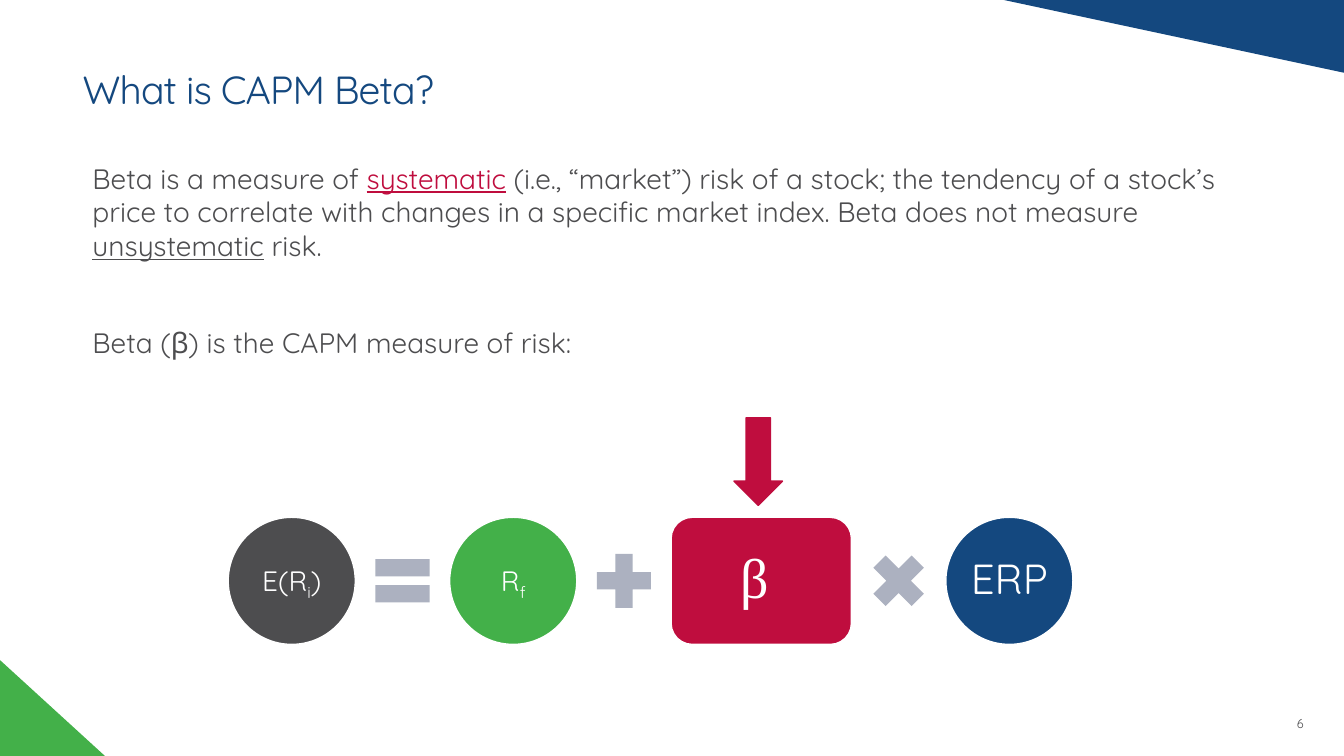
from dataclasses import dataclass

from pptx import Presentation
from pptx.dml.color import RGBColor
from pptx.enum.shapes import MSO_SHAPE
from pptx.enum.text import MSO_ANCHOR, PP_ALIGN
from pptx.util import Pt

ELLIPSE = MSO_SHAPE.OVAL
ROUNDED = MSO_SHAPE.ROUNDED_RECTANGLE
EQUAL, PLUS, TIMES = MSO_SHAPE.MATH_EQUAL, MSO_SHAPE.MATH_PLUS, MSO_SHAPE.MATH_MULTIPLY
RIGHT_ARROW = MSO_SHAPE.RIGHT_ARROW
TOP, MIDDLE, BOTTOM = MSO_ANCHOR.TOP, MSO_ANCHOR.MIDDLE, MSO_ANCHOR.BOTTOM
CENTER = PP_ALIGN.CENTER

BLUE, GREEN, RED = "14487F", "43B049", "BF0D3E"
GRAY, PALE, WHITE = "4D4D4F", "ACB1C0", "FFFFFF"
SANS, SERIF = "Quicksand", "Times New Roman"


@dataclass
class Span:
    text: str
    color: str | None = None
    underline: bool = False
    subscript: bool = False


@dataclass
class Term:
    kind: MSO_SHAPE
    width: float
    height: float
    fill: str
    spans: tuple[Span, ...] = ()
    size: float = 20
    font: str = SANS
    inset: float = 2.2


def rgb(color: str) -> RGBColor:
    return RGBColor.from_string(color)


def paint(shape, fill: str, line: str | None = None) -> None:
    shape.shadow.inherit = False
    shape.fill.solid()
    shape.fill.fore_color.rgb = rgb(fill)
    if line:
        shape.line.color.rgb = rgb(line)
        shape.line.width = Pt(1)
    else:
        shape.line.fill.background()


def write(paragraph, spans: tuple[Span, ...], size: float, color: str,
          font: str = SANS, spacing: float = 1.0) -> None:
    paragraph.line_spacing = spacing
    paragraph.font.size = Pt(size)
    paragraph.font.name = font
    paragraph.font.color.rgb = rgb(color)
    for span in spans:
        run = paragraph.add_run()
        run.text = span.text
        if span.color:
            run.font.color.rgb = rgb(span.color)
        if span.underline:
            run.font.underline = True
        if span.subscript:
            run.font._element.set("baseline", "-25000")


def set_frame(frame, anchor: MSO_ANCHOR, insets: tuple[float, float, float, float]) -> None:
    frame.word_wrap = True
    frame.vertical_anchor = anchor
    left, top, right, bottom = insets
    frame.margin_left, frame.margin_top = Pt(left), Pt(top)
    frame.margin_right, frame.margin_bottom = Pt(right), Pt(bottom)


def add_text_frame(slide, left: float, top: float, width: float, height: float,
                   anchor: MSO_ANCHOR, insets: tuple[float, float, float, float]):
    frame = slide.shapes.add_textbox(Pt(left), Pt(top), Pt(width), Pt(height)).text_frame
    set_frame(frame, anchor, insets)
    return frame


def add_corner(slide, points: list[tuple[float, float]], fill: str) -> None:
    start, *others = [(Pt(x), Pt(y)) for x, y in points]
    builder = slide.shapes.build_freeform(*start)
    builder.add_line_segments(others, close=True)
    paint(builder.convert_to_shape(), fill)


def add_term(slide, term: Term, left: float, middle: float) -> None:
    shape = slide.shapes.add_shape(term.kind, Pt(left), Pt(middle - term.height / 2),
                                   Pt(term.width), Pt(term.height))
    paint(shape, term.fill, WHITE if term.spans else None)
    if term.spans:
        set_frame(shape.text_frame, MIDDLE, (term.inset,) * 4)
        paragraph = shape.text_frame.paragraphs[0]
        paragraph.alignment = CENTER
        write(paragraph, term.spans, term.size, WHITE, term.font, 0.9)


def main() -> None:
    presentation = Presentation()
    presentation.slide_width, presentation.slide_height = Pt(960), Pt(540)
    slide = presentation.slides.add_slide(presentation.slide_layouts[6])

    # Corner decoration
    add_corner(slide, [(717, 0), (960, 52), (960, 0)], BLUE)
    add_corner(slide, [(0, 471.5), (75, 540), (0, 540)], GREEN)

    # Title
    title = add_text_frame(slide, 59, 46.8, 603.4, 29.5, MIDDLE, (0, 3.6, 7.2, 3.6))
    heading = title.paragraphs[0]
    write(heading, (Span("What is CAPM Beta?"),), 28, BLUE, spacing=1.13)
    heading.runs[0].font._element.set("spc", "-60")

    # Definition and lead-in to the equation
    body = add_text_frame(slide, 59, 111.6, 825.1, 150.5, TOP, (7.2, 3.6, 7.2, 3.6))
    write(body.paragraphs[0], (
        Span("Beta is a measure of "),
        Span("systematic", RED, underline=True),
        Span(" (i.e., “market”) risk of a stock; the tendency of a stock’s price to "
             "correlate with changes in a specific market index. Beta does not measure "),
        Span("unsystematic", underline=True),
        Span(" risk."),
    ), 20, GRAY)
    lead_in = body.add_paragraph()
    lead_in.space_before = Pt(48)
    write(lead_in, (Span("Beta (β) is the CAPM measure of risk:"),), 20, GRAY, spacing=0.9)

    # CAPM equation, laid out left to right with equal gaps
    circle, sign, gap, middle = 90.8, 52.6, 7.4, 414.9
    equation = [
        Term(ELLIPSE, circle, circle, GRAY,
             (Span("E(R"), Span("i", subscript=True), Span(")"))),
        Term(EQUAL, sign, sign, PALE),
        Term(ELLIPSE, circle, circle, GREEN, (Span("R"), Span("f", subscript=True))),
        Term(PLUS, sign, sign, PALE),
        Term(ROUNDED, 128.8, circle, RED, (Span("β "),), 40, SERIF, 4),
        Term(TIMES, sign, sign, PALE),
        Term(ELLIPSE, circle, circle, BLUE, (Span("ERP"),), 30, inset=2.9),
    ]
    left = 163.0
    for term in equation:
        add_term(slide, term, left, middle)
        left += term.width + gap

    # Arrow pointing down at beta
    beta_arrow = slide.shapes.add_shape(RIGHT_ARROW, Pt(510.3), Pt(312.4), Pt(62.6), Pt(34.6))
    beta_arrow.rotation = 90
    paint(beta_arrow, RED, RED)

    # Page number
    page_number = add_text_frame(slide, 926.3, 508.3, 33.7, 13.7, BOTTOM, (0, 0, 0, 0))
    write(page_number.paragraphs[0], (Span("6"),), 9, GRAY)

    presentation.save("out.pptx")


if __name__ == "__main__":
    main()
